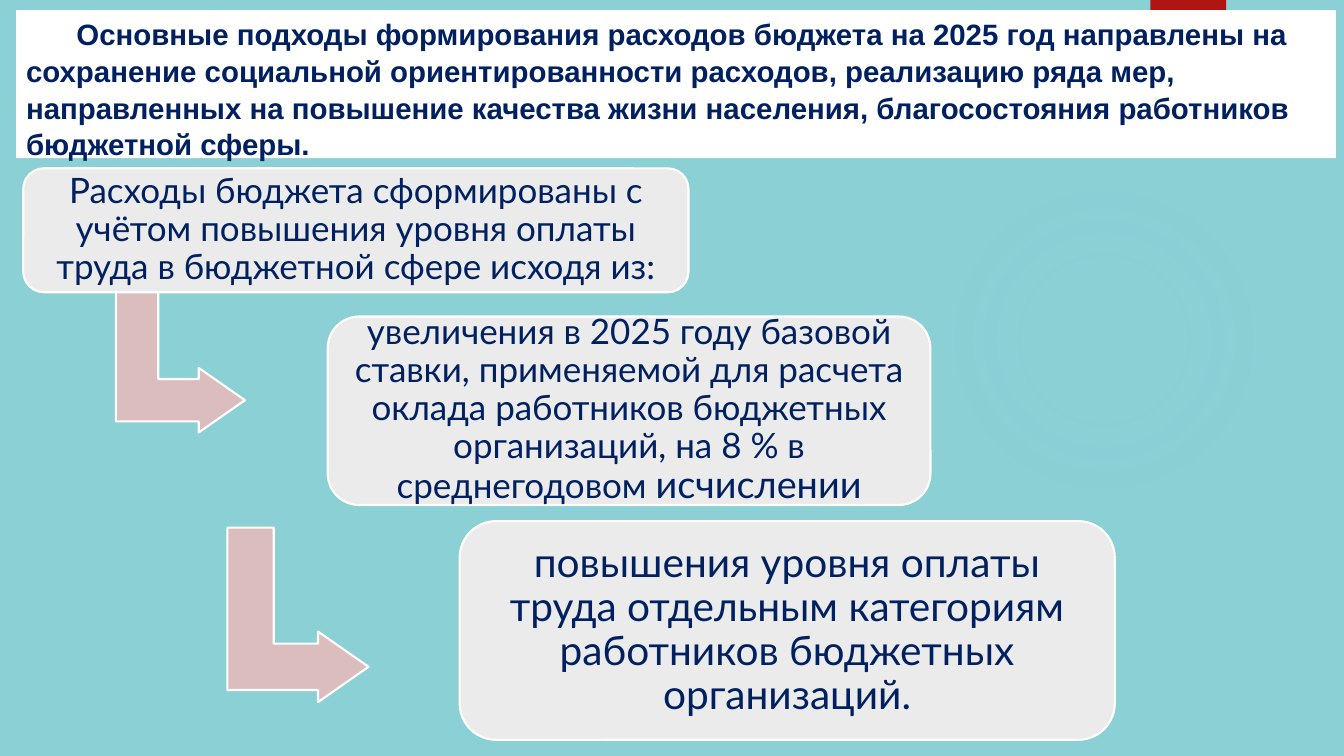
from dataclasses import dataclass

from pptx import Presentation
from pptx.dml.color import RGBColor
from pptx.enum.shapes import MSO_SHAPE
from pptx.enum.text import MSO_ANCHOR, PP_ALIGN
from pptx.oxml import parse_xml
from pptx.oxml.ns import nsdecls
from pptx.util import Inches, Pt

WIDTH, HEIGHT = Inches(13.33), Inches(7.5)
COLUMNS = ROWS = 100
NAVY, WHITE, PANEL, ARROW = "002060", "FFFFFF", "EBEBEB", "DCBDBD"
TEAL, GLOW, RED = "8AD0D5", "95D4DA", "B01513"

TITLE = (
    "Основные подходы формирования расходов бюджета на 2025 год направлены на "
    "сохранение социальной ориентированности расходов, реализацию ряда мер, "
    "направленных на повышение качества жизни населения, благосостояния "
    "работников бюджетной сферы."
)


@dataclass
class Area:
    """Place on the slide, in grid columns and rows."""
    left: float
    top: float
    width: float
    height: float


@dataclass
class Step:
    area: Area
    inset: float
    spans: list[tuple[str, int]]


STEPS = [
    Step(Area(1.73, 22.27, 49.5, 16.4), 0.1, [
        ("Расходы бюджета сформированы с учётом повышения уровня оплаты труда "
         "в бюджетной сфере исходя из:", 25)]),
    Step(Area(24.38, 41.87, 44.85, 24.93), 0.1, [
        ("увеличения в 2025 году базовой ставки, применяемой для расчета оклада "
         "работников бюджетных организаций, на 8 % в среднегодовом ", 25),
        ("исчислении", 27)]),
    Step(Area(34.2, 68.93, 48.75, 28.93), 0.12, [
        ("повышения уровня оплаты труда отдельным категориям работников "
         "бюджетных организаций.", 29)]),
]
ARROWS = [Area(7.8, 38.67, 11.25, 17.07), Area(15.68, 72, 12.98, 18.67)]


def colour(code: str) -> RGBColor:
    return RGBColor.from_string(code)


def apply(target, values: dict) -> None:
    for name, value in values.items():
        setattr(target, name, value)


def add_block(page, kind, area: Area, fill: str, outline: str | None = None,
              adjustments: tuple[float, ...] = ()):
    block = page.shapes.add_shape(
        kind,
        round(WIDTH * area.left / COLUMNS), round(HEIGHT * area.top / ROWS),
        round(WIDTH * area.width / COLUMNS), round(HEIGHT * area.height / ROWS))
    block.shadow.inherit = False
    block.fill.solid()
    block.fill.fore_color.rgb = colour(fill)
    if outline:
        block.line.color.rgb = colour(outline)
        block.line.width = Pt(1.5)
    else:
        block.line.fill.background()
    for index, value in enumerate(adjustments):
        block.adjustments[index] = value
    return block


def add_span(para, text: str, size: int, font: str, bold: bool = False) -> None:
    span = para.add_run()
    span.text = text
    apply(span.font, {"name": font, "size": Pt(size), "bold": bold})
    span.font.color.rgb = colour(NAVY)


def add_glow(page) -> None:
    glow = add_block(page, MSO_SHAPE.OVAL, Area(70.58, 24.4, 23.1, 41.07), GLOW)
    stops = "".join(
        f'<a:gs pos="{place * 1000}"><a:srgbClr val="{GLOW}">'
        f'<a:alpha val="{opacity * 1000}"/></a:srgbClr></a:gs>'
        for place, opacity in ((0, 7), (36, 6), (69, 0)))
    gradient = parse_xml(
        f'<a:gradFill {nsdecls("a")}><a:gsLst>{stops}</a:gsLst>'
        '<a:path path="circle"><a:fillToRect l="50000" t="50000" r="50000" '
        'b="50000"/></a:path></a:gradFill>')
    properties = glow._element.spPr
    properties.replace(properties.find(f"{{{gradient.nsmap['a']}}}solidFill"), gradient)


def add_title(page) -> None:
    box = add_block(page, MSO_SHAPE.RECTANGLE, Area(1.2, 1.33, 98.2, 19.6), WHITE)
    apply(box.text_frame, {"word_wrap": True, "vertical_anchor": MSO_ANCHOR.TOP})
    para = box.text_frame.paragraphs[0]
    apply(para, {"alignment": PP_ALIGN.LEFT, "line_spacing": 1.04})
    para._p.get_or_add_pPr().set("indent", str(Inches(0.5)))
    add_span(para, TITLE, 21, "Arial", bold=True)


def add_step(page, step: Step) -> None:
    box = add_block(page, MSO_SHAPE.ROUNDED_RECTANGLE, step.area, PANEL, WHITE, (0.167,))
    frame = box.text_frame
    apply(frame, {"word_wrap": True, "vertical_anchor": MSO_ANCHOR.MIDDLE})
    apply(frame, {f"margin_{side}": Inches(step.inset)
                  for side in ("left", "top", "right", "bottom")})
    para = frame.paragraphs[0]
    apply(para, {"alignment": PP_ALIGN.CENTER, "line_spacing": 0.9})
    for text, size in step.spans:
        add_span(para, text, size, "Lato")


def main() -> None:
    deck = Presentation()
    apply(deck, {"slide_width": WIDTH, "slide_height": HEIGHT})
    page = deck.slides.add_slide(deck.slide_layouts[6])

    # Backdrop
    page.background.fill.solid()
    page.background.fill.fore_color.rgb = colour(TEAL)
    add_glow(page)
    add_block(page, MSO_SHAPE.RECTANGLE, Area(85.6, 0, 5.63, 16.67), RED)

    # Heading
    add_title(page)

    # Descending steps with the arrows between them
    for area in ARROWS:
        arrow = add_block(page, MSO_SHAPE.BENT_UP_ARROW, area, ARROW, WHITE,
                          (0.328, 0.25, 0.358))
        arrow.rotation = 90
    for step in STEPS:
        add_step(page, step)

    deck.save("out.pptx")


if __name__ == "__main__":
    main()
